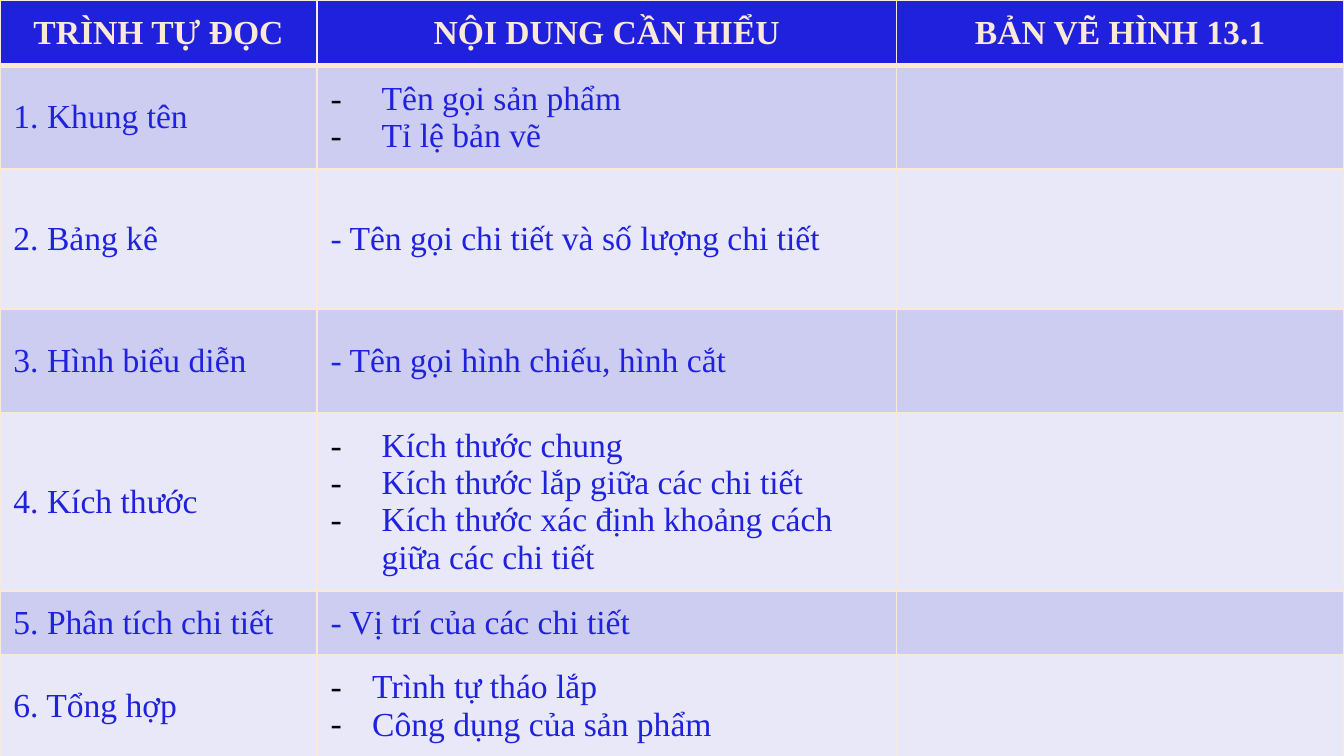
from dataclasses import dataclass

from lxml.etree import SubElement
from pptx import Presentation
from pptx.dml.color import RGBColor
from pptx.enum.text import MSO_ANCHOR as Anchor, PP_ALIGN as Align
from pptx.oxml.ns import qn
from pptx.table import _Cell as Cell
from pptx.util import Inches, Pt

COLORS = {
    "blue": "1F21DC",
    "cream": "FAE9D6",
    "band_dark": "CDCDF2",
    "band_light": "E8E8F9",
    "bullet": "000000",
}
FONT = "Times New Roman"
COLUMN_WIDTHS = (2.36, 4.31, 3.33)
HEADINGS = ("TRÌNH TỰ ĐỌC", "NỘI DUNG CẦN HIỂU", "BẢN VẼ HÌNH 13.1")
HEADING_HEIGHT = 0.49


@dataclass(frozen=True)
class ReadingStep:
    title: str
    contents: tuple[str, ...]
    height: float
    indent: float = 0


STEPS = (
    ReadingStep("1. Khung tên", ("Tên gọi sản phẩm", "Tỉ lệ bản vẽ"), 0.77, 0.38),
    ReadingStep("2. Bảng kê", ("- Tên gọi chi tiết và số lượng chi tiết",), 1.04),
    ReadingStep("3. Hình biểu diễn", ("- Tên gọi hình chiếu, hình cắt",), 0.77),
    ReadingStep(
        "4. Kích thước",
        (
            "Kích thước chung",
            "Kích thước lắp giữa các chi tiết",
            "Kích thước xác định khoảng cách giữa các chi tiết",
        ),
        1.33,
        0.38,
    ),
    ReadingStep("5. Phân tích chi tiết", ("- Vị trí của các chi tiết",), 0.47),
    ReadingStep("6. Tổng hợp", ("Trình tự tháo lắp", "Công dụng của sản phẩm"), 0.77, 0.31),
)


def add_solid_color(parent, color: str) -> None:
    SubElement(parent, qn("a:srgbClr"), val=COLORS[color])


def style_cell(cell: Cell, fill: str, top_width: float = 1, bottom_width: float = 1) -> None:
    properties = cell._tc.get_or_add_tcPr()
    for side, width in (("L", 1), ("R", 1), ("T", top_width), ("B", bottom_width)):
        border = SubElement(properties, qn(f"a:ln{side}"), w=str(Pt(width)))
        add_solid_color(SubElement(border, qn("a:solidFill")), "cream")
    cell.fill.solid()
    cell.fill.fore_color.rgb = RGBColor.from_string(COLORS[fill])
    cell.vertical_anchor = Anchor.MIDDLE


def write_text(
    cell: Cell,
    *lines: str,
    color: str = "blue",
    bold: bool = False,
    align: Align = Align.LEFT,
    indent: float = 0,
) -> None:
    cell.text = "\n".join(lines)
    for paragraph in cell.text_frame.paragraphs:
        paragraph.alignment = align
        for run in paragraph.runs:
            run.font.name = FONT
            run.font.size = Pt(18)
            run.font.bold = bold
            run.font.color.rgb = RGBColor.from_string(COLORS[color])
        if indent:
            properties = paragraph._p.get_or_add_pPr()
            properties.set("marL", str(Inches(indent)))
            properties.set("indent", str(-Inches(indent)))
            add_solid_color(SubElement(properties, qn("a:buClr")), "bullet")
            SubElement(properties, qn("a:buFont"), typeface=FONT)
            SubElement(properties, qn("a:buChar"), char="-")


def main() -> None:
    """Build the slide on the order of reading an assembly drawing."""
    deck = Presentation()
    deck.slide_width = Inches(10)
    deck.slide_height = deck.slide_width * 9 // 16
    slide = deck.slides.add_slide(deck.slide_layouts[6])
    table = slide.shapes.add_table(
        len(STEPS) + 1, len(HEADINGS), 0, 0, deck.slide_width, deck.slide_height
    ).table

    for column, width in zip(table.columns, COLUMN_WIDTHS):
        column.width = Inches(width)
    heights = [HEADING_HEIGHT] + [step.height for step in STEPS]
    for row, height in zip(table.rows, heights):
        row.height = Inches(height)

    for cell, heading in zip(table.rows[0].cells, HEADINGS):
        style_cell(cell, "blue", bottom_width=3)
        write_text(cell, heading, color="cream", bold=True, align=Align.CENTER)

    for index, step in enumerate(STEPS):
        cells = list(table.rows[index + 1].cells)
        for cell in cells:
            style_cell(
                cell,
                "band_light" if index % 2 else "band_dark",
                top_width=1 if index else 3,
            )
        write_text(cells[0], step.title)
        write_text(cells[1], *step.contents, indent=step.indent)

    deck.save("out.pptx")


if __name__ == "__main__":
    main()
